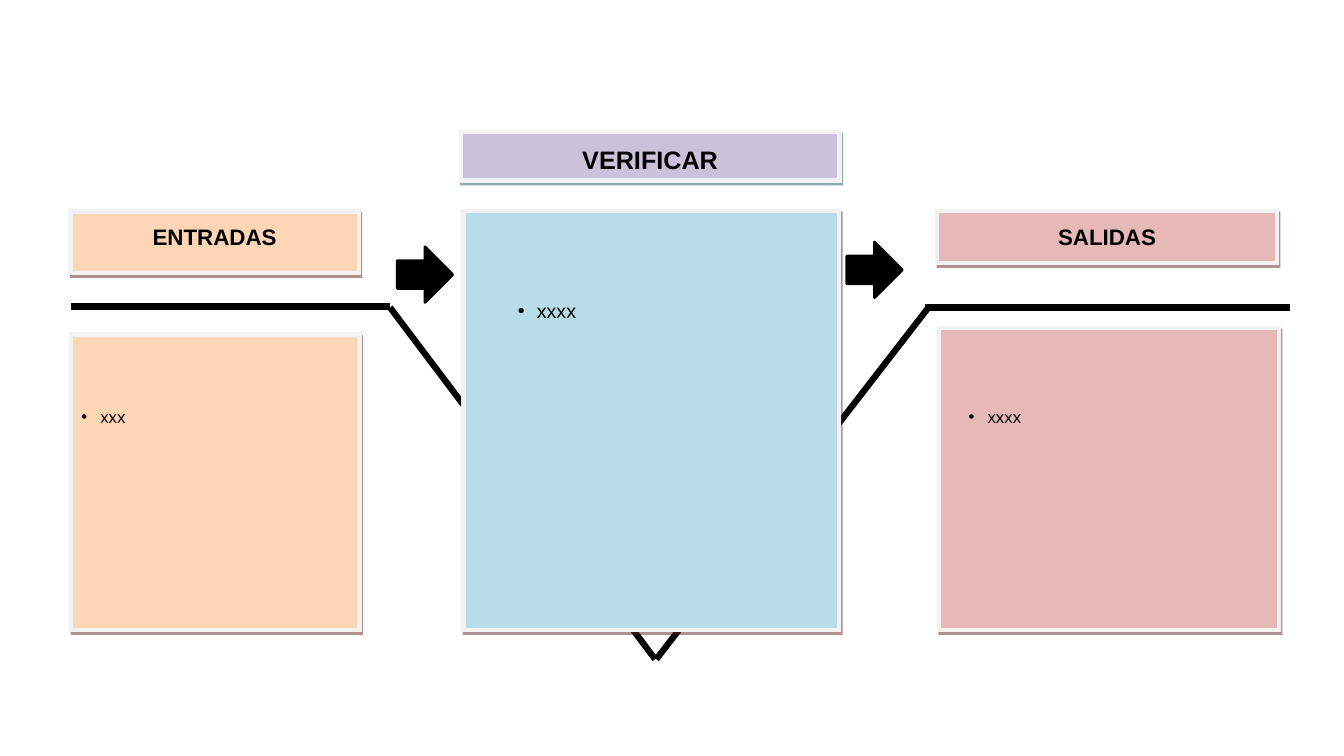
from dataclasses import dataclass

from lxml import etree
from pptx import Presentation
from pptx.dml.color import RGBColor
from pptx.enum import shapes, text
from pptx.oxml import ns
from pptx.util import Cm, Pt

BLACK = RGBColor(0x00, 0x00, 0x00)
BORDER = RGBColor(0xF2, 0xF2, 0xF2)
ORANGE = RGBColor(0xFC, 0xD5, 0xB5)
PINK = RGBColor(0xE6, 0xB9, 0xB8)
LILAC = RGBColor(0xCC, 0xC1, 0xDA)
AQUA = RGBColor(0xB7, 0xDE, 0xE8)
MAROON = RGBColor(0x63, 0x25, 0x23)
TEAL = RGBColor(0x21, 0x59, 0x68)

FONT = "Arial"
PANEL_BOTTOM = 15.88
ARROW_SIZE = 1.4
HANGING = 0.48


@dataclass(frozen=True)
class Block:
    left: float
    top: float
    width: float
    height: float
    fill: RGBColor
    shadow: RGBColor = MAROON
    title: str = ""
    size: int = 16


@dataclass(frozen=True)
class Stroke:
    x1: float
    y1: float
    x2: float
    y2: float


@dataclass(frozen=True)
class Item:
    left: float
    top: float
    width: float
    height: float
    wording: str
    size: int


HEADINGS = [
    Block(1.78, 5.33, 7.26, 1.55, ORANGE, title="ENTRADAS"),
    Block(23.62, 5.31, 8.56, 1.32, PINK, title="SALIDAS"),
    Block(11.61, 3.33, 9.55, 1.22, LILAC, TEAL, "VERIFICAR", 18),
]
FUNNEL_SIDES = [Stroke(16.54, 16.61, 23.42, 7.72), Stroke(9.83, 7.75, 16.51, 16.61)]
PANELS = [
    Block(left, top, width, PANEL_BOTTOM - top, fill)
    for left, top, width, fill in [
        (1.8, 8.43, 7.26, ORANGE),
        (11.68, 5.31, 9.47, AQUA),
        (23.67, 8.26, 8.56, PINK),
    ]
]
FUNNEL_RIMS = [Stroke(1.8, 7.72, 9.83, 7.72), Stroke(23.32, 7.75, 32.51, 7.75)]
ARROWS = [
    Block(left, top, ARROW_SIZE, ARROW_SIZE, BLACK)
    for left, top in [(10.01, 6.22), (21.34, 6.1)]
]
ITEMS = [
    Item(1.8, 10.13, 7.24, 0.76, "xxx", 12),
    Item(12.8, 7.42, 7.42, 0.86, "xxxx", 14),
    Item(24.16, 10.13, 6.68, 0.76, "xxxx", 12),
]


def add_run(paragraph, wording: str, size: int, bold: bool = False) -> None:
    run = paragraph.add_run()
    run.text = wording
    run.font.name = FONT
    run.font.size = Pt(size)
    run.font.bold = bold
    run.font.color.rgb = BLACK


def add_filled(slide, kind, block: Block, border: RGBColor, weight: float, join: str):
    shape = slide.shapes.add_shape(
        kind, Cm(block.left), Cm(block.top), Cm(block.width), Cm(block.height)
    )
    shape.shadow.inherit = False
    shape.fill.solid()
    shape.fill.fore_color.rgb = block.fill
    shape.line.color.rgb = border
    shape.line.width = Pt(weight)
    outline = shape._element.spPr.find(ns.qn("a:ln"))
    etree.SubElement(outline, ns.qn(f"a:{join}"))
    return shape


def add_block(slide, block: Block) -> None:
    shape = add_filled(slide, shapes.MSO_SHAPE.RECTANGLE, block, BORDER, 3, "miter")
    effects = shape._element.spPr.find(ns.qn("a:effectLst"))
    shadow = etree.SubElement(
        effects, ns.qn("a:outerShdw"),
        dist=str(Pt(2.2)), dir="3780000", algn="ctr", rotWithShape="0",
    )
    colour = etree.SubElement(shadow, ns.qn("a:srgbClr"), val=str(block.shadow))
    etree.SubElement(colour, ns.qn("a:alpha"), val="50000")
    if block.title:
        frame = shape.text_frame
        frame.word_wrap = True
        frame.vertical_anchor = text.MSO_ANCHOR.TOP
        frame.margin_top = Cm(0.2)
        heading = frame.paragraphs[0]
        heading.alignment = text.PP_ALIGN.CENTER
        heading.line_spacing = 1.15
        add_run(heading, block.title, block.size, True)


def add_stroke(slide, stroke: Stroke) -> None:
    line = slide.shapes.add_connector(
        shapes.MSO_CONNECTOR.STRAIGHT,
        Cm(stroke.x1), Cm(stroke.y1), Cm(stroke.x2), Cm(stroke.y2),
    )
    line.line.color.rgb = BLACK
    line.line.width = Pt(4.5)
    etree.SubElement(line._element.spPr, ns.qn("a:effectLst"))


def add_item(slide, item: Item) -> None:
    box = slide.shapes.add_textbox(
        Cm(item.left), Cm(item.top), Cm(item.width), Cm(item.height)
    )
    frame = box.text_frame
    frame.word_wrap = True
    frame.auto_size = text.MSO_AUTO_SIZE.SHAPE_TO_FIT_TEXT
    paragraph = frame.paragraphs[0]
    props = paragraph._p.get_or_add_pPr()
    props.set("marL", str(Cm(HANGING)))
    props.set("indent", str(-Cm(HANGING)))
    etree.SubElement(props, ns.qn("a:buFont"), typeface=FONT)
    etree.SubElement(props, ns.qn("a:buChar"), char="•")
    add_run(paragraph, item.wording, item.size)


def main() -> None:
    deck = Presentation()
    deck.slide_width = Cm(33.87)
    deck.slide_height = Cm(19.05)
    slide = deck.slides.add_slide(deck.slide_layouts[6])
    for heading in HEADINGS:
        add_block(slide, heading)
    for side in FUNNEL_SIDES:
        add_stroke(slide, side)
    for panel in PANELS:
        add_block(slide, panel)
    for rim in FUNNEL_RIMS:
        add_stroke(slide, rim)
    for arrow in ARROWS:
        add_filled(slide, shapes.MSO_SHAPE.RIGHT_ARROW, arrow, BLACK, 2, "round")
    for item in ITEMS:
        add_item(slide, item)
    deck.save("out.pptx")


if __name__ == "__main__":
    main()
